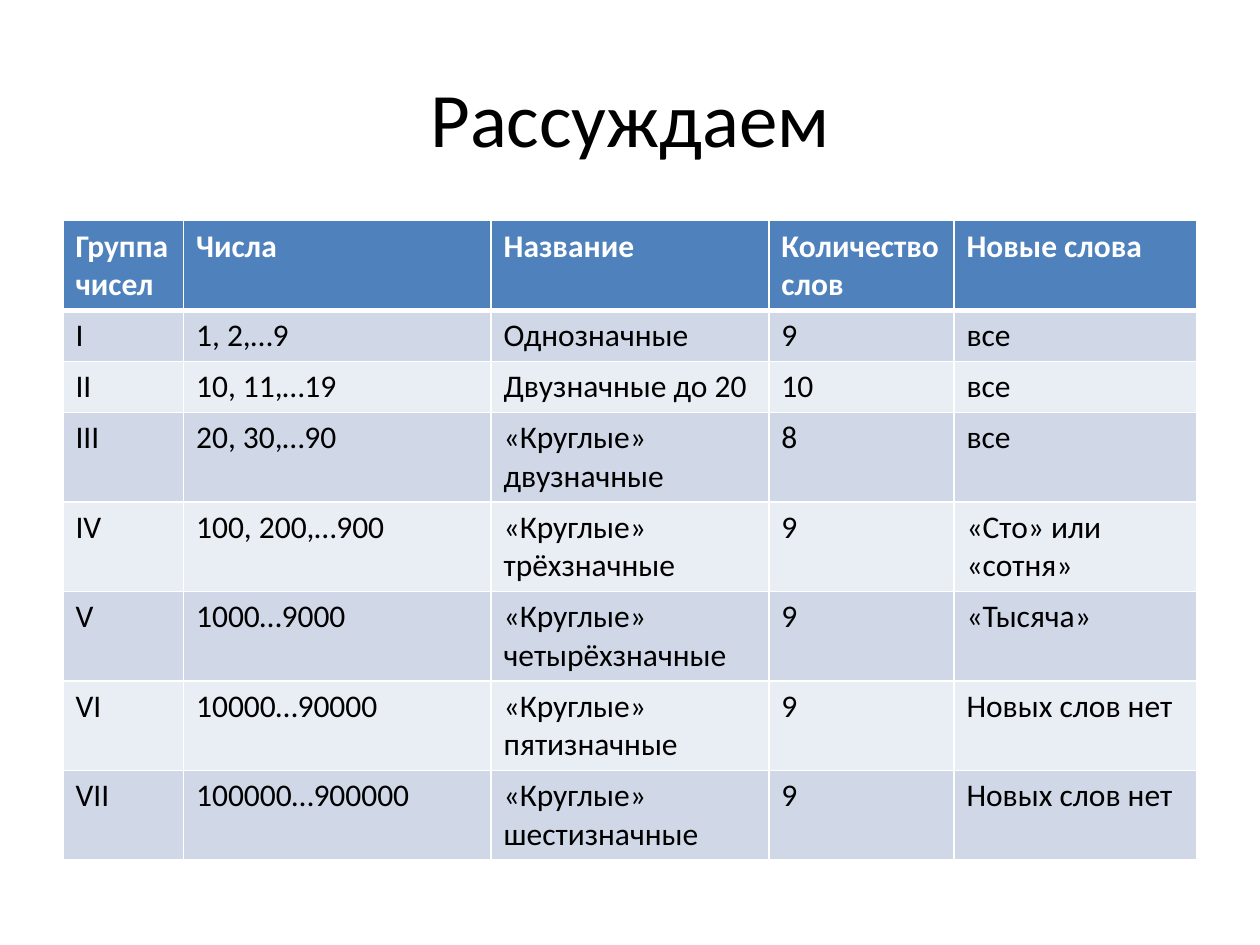
import pptx
import pptx.dml.color
import pptx.enum.text
import pptx.oxml
import pptx.oxml.ns
import pptx.util
from pptx.util import Cm

RGBColor = pptx.dml.color.RGBColor
BLACK = RGBColor(0x00, 0x00, 0x00)
WHITE = RGBColor(0xFF, 0xFF, 0xFF)
HEADER_BLUE = RGBColor(0x4F, 0x81, 0xBD)
BANDS = (RGBColor(0xD0, 0xD8, 0xE8), RGBColor(0xE9, 0xED, 0xF4))

FONT = "Calibri"
COLUMN_WIDTHS = (2.43, 6.2, 5.6, 3.73, 4.9)  # cm
ROW_HEIGHT = 1.03  # cm, rows with two lines grow
ROWS = (
    ("Группа чисел", "Числа", "Название", "Количество слов", "Новые слова"),
    ("I", "1, 2,…9", "Однозначные", "9", "все"),
    ("II", "10, 11,…19", "Двузначные до 20", "10", "все"),
    ("III", "20, 30,…90", "«Круглые» двузначные", "8", "все"),
    ("IV", "100, 200,…900", "«Круглые» трёхзначные", "9", "«Сто» или «сотня»"),
    ("V", "1000…9000", "«Круглые» четырёхзначные", "9", "«Тысяча»"),
    ("VI", "10000…90000", "«Круглые» пятизначные", "9", "Новых слов нет"),
    ("VII", "100000…900000", "«Круглые» шестизначные", "9", "Новых слов нет"),
)


def write_text(text_frame, text, size=18, color=BLACK, bold=False,
               align=pptx.enum.text.PP_ALIGN.LEFT):
    paragraph = text_frame.paragraphs[0]
    paragraph.alignment = align
    run = paragraph.add_run()
    run.text = text
    run.font.name = FONT
    run.font.size = pptx.util.Pt(size)
    run.font.bold = bold
    run.font.color.rgb = color


def set_borders(cell, color, **widths):
    """Draw the cell's sides; call before filling, as lines precede the fill."""
    properties = cell._tc.get_or_add_tcPr()
    for side in "LRTB":
        width = pptx.util.Pt(widths.get(side, 1))
        properties.append(pptx.oxml.parse_xml(
            f'<a:ln{side} {pptx.oxml.ns.nsdecls("a")} w="{width}">'
            f'<a:solidFill><a:srgbClr val="{color}"/></a:solidFill></a:ln{side}>'))


def place_title(slide, text, left, top, width, height):
    title = slide.shapes.title
    title.left, title.top, title.width, title.height = left, top, width, height
    title.text_frame.vertical_anchor = pptx.enum.text.MSO_ANCHOR.MIDDLE
    write_text(title.text_frame, text, size=44,
               align=pptx.enum.text.PP_ALIGN.CENTER)


def place_table(slide, rows, left, top, width):
    table = slide.shapes.add_table(
        len(rows), len(COLUMN_WIDTHS), left, top, width,
        Cm(ROW_HEIGHT * len(rows))).table
    for column, share in zip(table.columns, COLUMN_WIDTHS):
        column.width = int(width * share / sum(COLUMN_WIDTHS))
    for row_index, texts in enumerate(rows):
        is_header = row_index == 0
        table.rows[row_index].height = Cm(ROW_HEIGHT)
        for column_index, text in enumerate(texts):
            cell = table.cell(row_index, column_index)
            # A thick line parts the header from the body
            set_borders(cell, WHITE, B=3 if is_header else 1,
                        T=3 if row_index == 1 else 1)
            cell.fill.solid()
            cell.fill.fore_color.rgb = (
                HEADER_BLUE if is_header else BANDS[(row_index - 1) % 2])
            write_text(cell.text_frame, text, bold=is_header,
                       color=WHITE if is_header else BLACK)


def main():
    presentation = pptx.Presentation()
    presentation.slide_width = Cm(25.4)
    presentation.slide_height = Cm(19.05)
    slide = presentation.slides.add_slide(presentation.slide_layouts[5])

    # Title above, table below, with equal side margins
    margin = Cm(1.27)
    width = presentation.slide_width - 2 * margin
    place_title(slide, "Рассуждаем", margin, Cm(0.76), width, Cm(3.18))
    place_table(slide, ROWS, margin, Cm(4.45), width)

    presentation.save("out.pptx")


if __name__ == "__main__":
    main()
